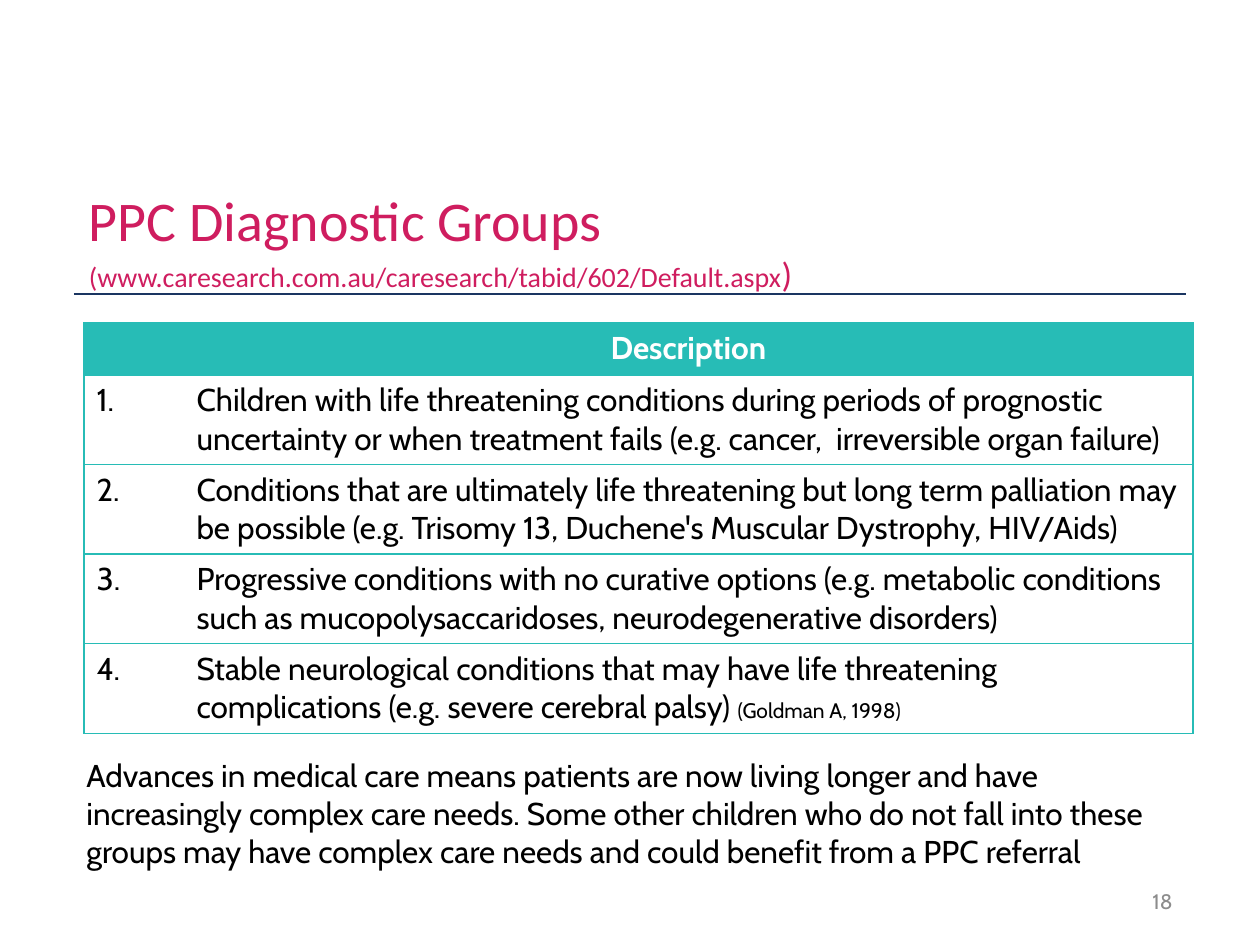
from lxml.etree import SubElement
from pptx import Presentation
from pptx.dml.color import RGBColor
from pptx.enum.shapes import MSO_CONNECTOR
from pptx.enum.text import MSO_ANCHOR, MSO_AUTO_SIZE, PP_ALIGN
from pptx.oxml.ns import qn
from pptx.util import Emu, Pt

PX_PER_INCH = 126
TEAL, PINK, NAVY, GREY = "27BCB6", "CF1D5F", "1A3561", "8C8C8C"
BLACK, WHITE = "000000", "FFFFFF"

GROUPS = [
    [("Children with life threatening conditions during periods of prognostic "
      "uncertainty or when treatment fails (e.g. cancer,  irreversible organ failure)", 18)],
    [("Conditions that are ultimately life threatening but long term palliation may "
      "be possible (e.g. Trisomy 13, Duchene's Muscular Dystrophy, HIV/Aids)", 18)],
    [("Progressive conditions with no curative options (e.g. metabolic conditions "
      "such as mucopolysaccaridoses, neurodegenerative disorders)", 18)],
    [("Stable neurological conditions that may have life threatening "
      "complications (e.g. severe cerebral palsy) ", 18), ("(Goldman A, 1998)", 12)],
]
ADVANCES = ("Advances in medical care means patients are now living longer and have "
            "increasingly complex care needs. Some other children who do not fall into "
            "these groups may have complex care needs and could benefit from a PPC referral")


def px(length):
    return Emu(round(length * 914400 / PX_PER_INCH))


def rgb(color):
    return RGBColor.from_string(color)


def add_run(paragraph, text, size, color=BLACK, font="Cabin", bold=False):
    run = paragraph.add_run()
    run.text = text
    run.font.size = Pt(size)
    run.font.name = font
    run.font.bold = bold
    run.font.color.rgb = rgb(color)


def set_title(slide):
    title = slide.shapes.title
    title.left, title.top, title.width, title.height = px(74), px(195), px(1111), px(90)
    frame = title.text_frame
    frame.auto_size = MSO_AUTO_SIZE.NONE
    frame.word_wrap = True
    frame.vertical_anchor = MSO_ANCHOR.MIDDLE
    frame.margin_left = px(15)
    heading = frame.paragraphs[0]
    heading.alignment = PP_ALIGN.LEFT
    add_run(heading, "PPC Diagnostic Groups", 32, PINK, "Calibri")
    heading.add_line_break()
    add_run(heading, "(www.caresearch.com.au/caresearch/tabid/602/Default.aspx", 16, PINK, "Calibri")
    add_run(heading, ")", 20, PINK, "Calibri")


def add_rule(slide, left, right, y):
    rule = slide.shapes.add_connector(MSO_CONNECTOR.STRAIGHT, px(left), px(y), px(right), px(y))
    rule.line.color.rgb = rgb(NAVY)
    rule.line.width = Pt(1.5)
    SubElement(rule._element.spPr, qn("a:effectLst"))


def add_text(slide, left, top, width, height, text, size, color,
             align=PP_ALIGN.LEFT, anchor=MSO_ANCHOR.TOP):
    frame = slide.shapes.add_textbox(px(left), px(top), px(width), px(height)).text_frame
    frame.word_wrap = True
    frame.vertical_anchor = anchor
    frame.paragraphs[0].alignment = align
    add_run(frame.paragraphs[0], text, size, color)


def set_borders(cell, sides):
    """Draw teal lines on the named sides and none on the others."""
    properties = cell._tc.get_or_add_tcPr()
    for side in "LRTB":
        border = SubElement(properties, qn(f"a:ln{side}"), w=str(Pt(0.75)))
        if side in sides:
            fill = SubElement(border, qn("a:solidFill"))
            SubElement(fill, qn("a:srgbClr"), val=TEAL)
        else:
            SubElement(border, qn("a:noFill"))


def add_groups_table(slide):
    table = slide.shapes.add_table(len(GROUPS) + 1, 2, px(84), px(323), px(1109), px(410)).table
    table.first_row = table.horz_banding = False
    for column, width in zip(table.columns, (100, 1009)):
        column.width = px(width)
    for index, row in enumerate(table.rows):
        row.height = px(89.5 if index else 52)
        for cell, sides in zip(row.cells, ("LTB", "RTB")):
            set_borders(cell, sides)
            if index:
                cell.fill.background()
            else:
                cell.fill.solid()
                cell.fill.fore_color.rgb = rgb(TEAL)

    # Header, then one numbered row for each group
    header = table.cell(0, 1).text_frame.paragraphs[0]
    header.alignment = PP_ALIGN.CENTER
    add_run(header, "Description", 18, WHITE, bold=True)
    for number, description in enumerate(GROUPS, 1):
        add_run(table.cell(number, 0).text_frame.paragraphs[0], f"{number}.", 18)
        for text, size in description:
            add_run(table.cell(number, 1).text_frame.paragraphs[0], text, size)


def main():
    deck = Presentation()
    deck.slide_width, deck.slide_height = px(1260), px(945)
    slide = deck.slides.add_slide(deck.slide_layouts[5])

    # Heading
    add_rule(slide, 74, 1186, 294)
    set_title(slide)

    # Diagnostic groups and closing remark
    add_groups_table(slide)
    add_text(slide, 74, 750, 1121, 127, ADVANCES, 18, BLACK)

    # Page number
    add_text(slide, 903, 876, 282, 50, "18", 12, GREY, PP_ALIGN.RIGHT, MSO_ANCHOR.MIDDLE)
    deck.save("out.pptx")


if __name__ == "__main__":
    main()
